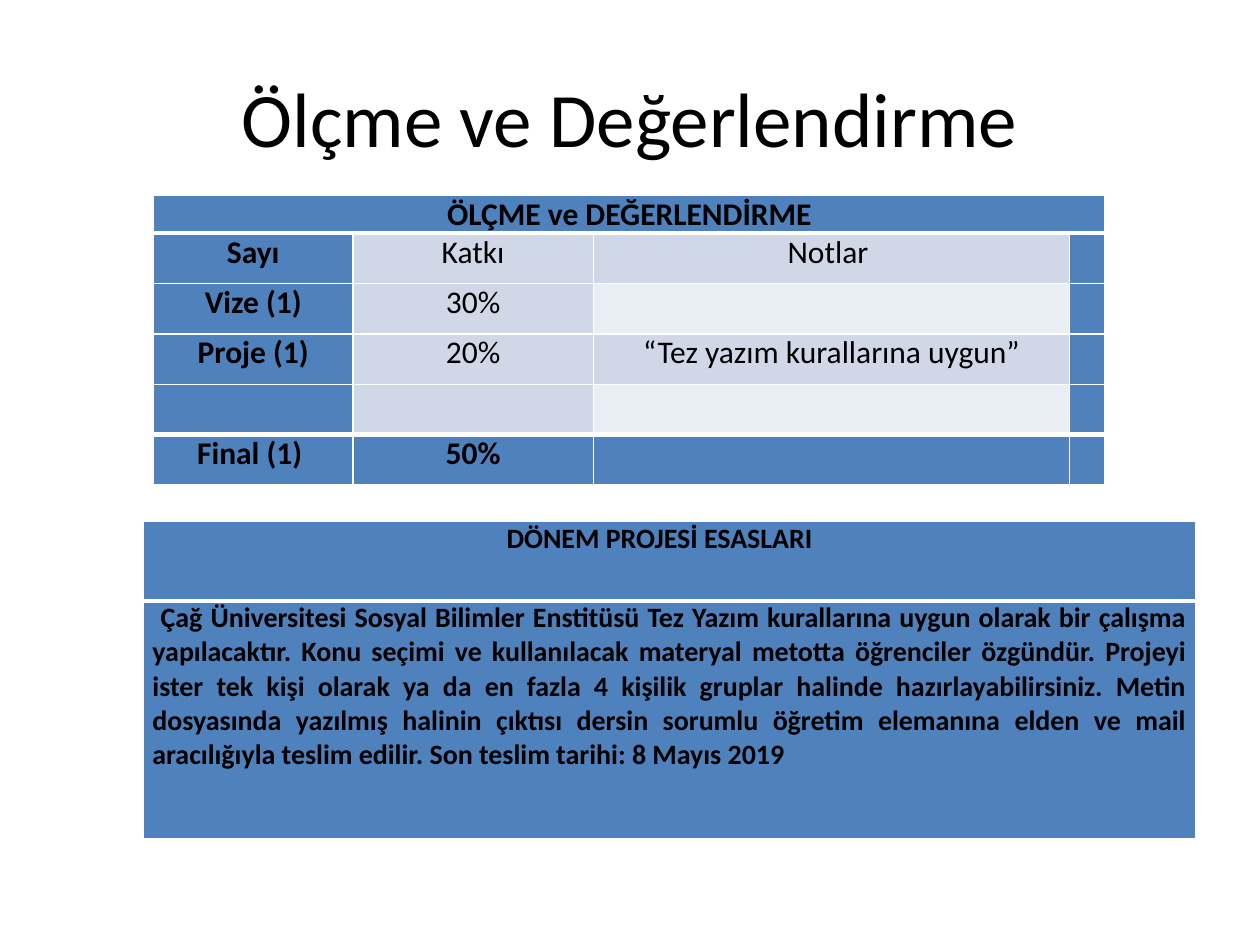
from lxml import etree
from pptx import Presentation
from pptx.dml.color import RGBColor
from pptx.enum import text
from pptx.oxml import ns
from pptx.util import Inches, Pt

BLACK = RGBColor(0, 0, 0)
WHITE = RGBColor(255, 255, 255)
BLUE = RGBColor(0x4F, 0x81, 0xBD)
MID = RGBColor(0xD0, 0xD8, 0xE8)
PALE = RGBColor(0xE9, 0xED, 0xF4)
MIDDLE = text.PP_ALIGN.CENTER


def style(para, size, bold, align=MIDDLE):
    para.alignment = align
    font = para.font
    font.name = "Calibri"
    font.size = Pt(size)
    font.bold = bold
    font.color.rgb = BLACK


def edge(cell, top, base):
    props = cell._tc.get_or_add_tcPr()
    sides = (("lnL", 1), ("lnR", 1), ("lnT", top), ("lnB", base))
    for spot, (side, width) in enumerate(sides):
        line = etree.Element(ns.qn("a:" + side), w=str(Pt(width)))
        fill = etree.SubElement(line, ns.qn("a:solidFill"))
        etree.SubElement(fill, ns.qn("a:srgbClr"), val=str(WHITE))
        props.insert(spot, line)


deck = Presentation()
deck.slide_width = Inches(10)
deck.slide_height = Inches(7.5)
slide = deck.slides.add_slide(deck.slide_layouts[6])

title = slide.shapes.add_textbox(Inches(0.5), Inches(0.3), Inches(9), Inches(1.25))
frame = title.text_frame
frame.word_wrap = True
frame.vertical_anchor = text.MSO_ANCHOR.MIDDLE
frame.text = "Ölçme ve Değerlendirme"
style(frame.paragraphs[0], 44, False)

marks = [
    ["ÖLÇME ve DEĞERLENDİRME", "", "", ""],
    ["Sayı", "Katkı", "Notlar ", ""],
    ["Vize (1)", "30%", "", ""],
    ["Proje (1)", "20%", "“Tez yazım kurallarına uygun”", ""],
    ["", "", "", ""],
    ["Final (1) ", "50%", "", ""],
]
rules = [
    ["DÖNEM PROJESİ ESASLARI"],
    [" Çağ Üniversitesi Sosyal Bilimler Enstitüsü Tez Yazım kurallarına uygun "
     "olarak bir çalışma yapılacaktır. Konu seçimi ve kullanılacak materyal "
     "metotta öğrenciler özgündür. Projeyi ister tek kişi olarak ya da en fazla "
     "4 kişilik gruplar halinde hazırlayabilirsiniz. Metin dosyasında yazılmış "
     "halinin çıktısı dersin sorumlu öğretim elemanına elden ve mail "
     "aracılığıyla teslim edilir. Son teslim tarihi: 8 Mayıs 2019"],
]
plans = [
    (marks, 1.22, 1.55, [1.58, 1.91, 3.78, 0.28], [0.3] + [0.4] * 5, 18),
    (rules, 1.14, 4.14, [8.35], [0.63, 1.89], 16),
]
grids = []
for data, left, top, wides, highs, size in plans:
    grid = slide.shapes.add_table(
        len(highs), len(wides), Inches(left), Inches(top),
        Inches(sum(wides)), Inches(sum(highs))).table
    grid.horz_banding = False
    grids.append(grid)
    for col, wide in zip(grid.columns, wides):
        col.width = Inches(wide)
    last = len(highs) - 1
    thick = {0, last - 1}
    for r, high in enumerate(highs):
        grid.rows[r].height = Inches(high)
        for c, words in enumerate(data[r]):
            cell = grid.cell(r, c)
            cell.margin_left = cell.margin_right = Inches(0.07)
            cell.margin_top = cell.margin_bottom = 0
            cell.text = words
            head = r in (0, last) or c in (0, 3)
            style(cell.text_frame.paragraphs[0], size, head)
            cell.fill.solid()
            if head:
                cell.fill.fore_color.rgb = BLUE
            elif c == 2 and r % 2 == 0:
                cell.fill.fore_color.rgb = PALE
            else:
                cell.fill.fore_color.rgb = MID
            edge(cell, 3 if r - 1 in thick else 1, 3 if r in thick else 1)

score, terms = grids
score.cell(0, 0).merge(score.cell(0, 3))
terms.cell(0, 0).margin_right = Inches(0.23)
terms.cell(1, 0).text_frame.paragraphs[0].alignment = text.PP_ALIGN.JUSTIFY

deck.save("out.pptx")
